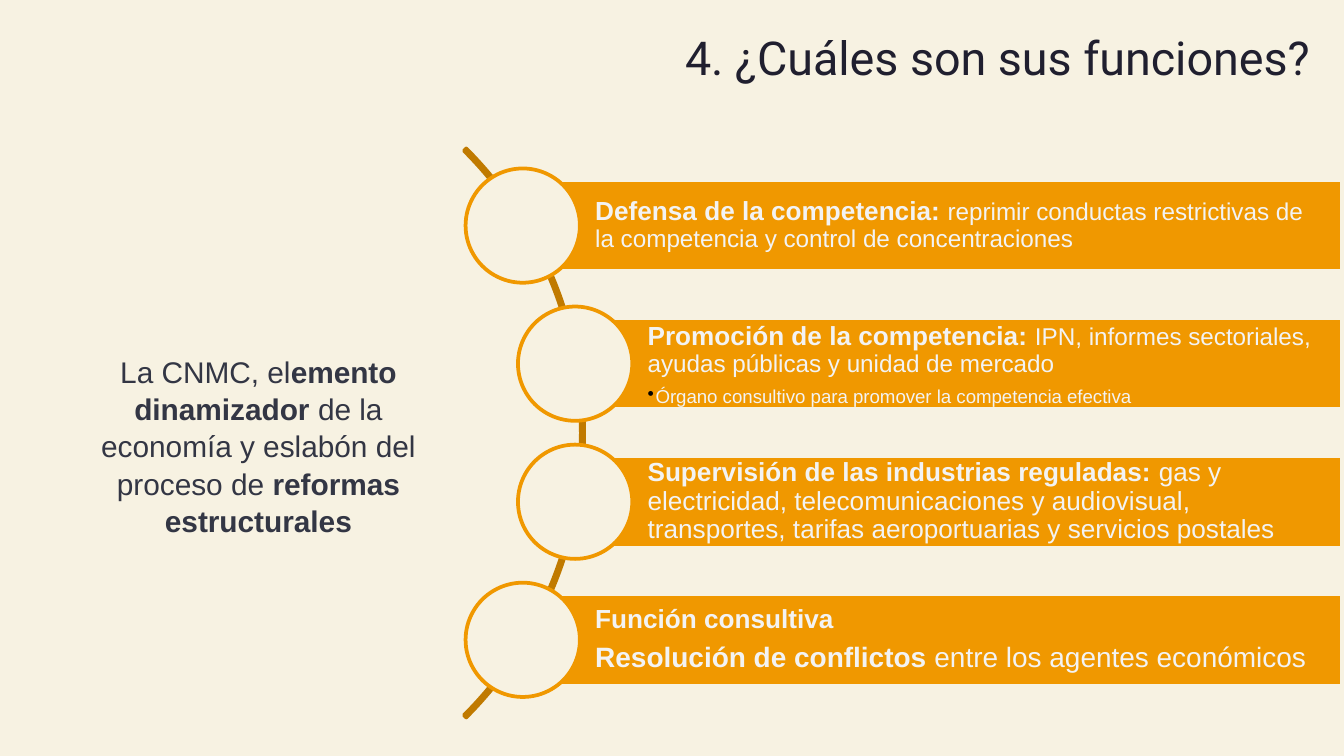
"""Builds the slide on the functions of the CNMC."""
from lxml.etree import SubElement
from pptx import Presentation
from pptx.dml.color import RGBColor
from pptx.enum.shapes import MSO_SHAPE as Shape
from pptx.enum.text import MSO_ANCHOR as Anchor, MSO_AUTO_SIZE as AutoSize, PP_ALIGN as Align
from pptx.oxml.ns import qn
from pptx.util import Cm, Pt

CREAM = RGBColor(0xF7, 0xF2, 0xE2)
ORANGE = RGBColor(0xF0, 0x98, 0x00)
BROWN = RGBColor(0xC0, 0x7A, 0x00)
NAVY = RGBColor(0x20, 0x1F, 0x2F)
SLATE = RGBColor(0x33, 0x36, 0x44)
PALE = RGBColor(0xF3, 0xF3, 0xF3)

RIGHT_EDGE = 25.37
OUTER_LEFT, INNER_LEFT = 9.88, 10.87
FIRST_TOP, STEP = 3.4, 2.61
BAR_HEIGHT, DIAMETER = 1.73, 2.16

FUNCTIONS = [
    (OUTER_LEFT, Anchor.MIDDLE, [
        [("Defensa de la competencia: ", 14, True),
         ("reprimir conductas restrictivas de\nla competencia y control de concentraciones", 13, False)]], None),
    (INNER_LEFT, Anchor.TOP, [
        [("Promoción de la competencia: ", 14, True),
         ("IPN, informes sectoriales, ayudas públicas y unidad de mercado", 13, False)]],
     "Órgano consultivo para promover la competencia efectiva"),
    (INNER_LEFT, Anchor.MIDDLE, [
        [("Supervisión de las industrias reguladas: ", 14, True),
         ("gas y electricidad, telecomunicaciones y audiovisual,\n"
          "transportes, tarifas aeroportuarias y servicios postales", 14, False)]], None),
    (OUTER_LEFT, Anchor.MIDDLE, [
        [("Función consultiva", 14, True)],
        [("Resolución de conflictos ", 15, True), ("entre los agentes económicos", 15, False)]], None),
]

SUMMARY = [
    ("La CNMC, el", 16, False),
    ("emento dinamizador ", 16, True),
    ("de la economía y eslabón del proceso de ", 16, False),
    ("reformas estructurales", 16, True),
]


class SlideBuilder:
    """Holds the style and the current slide."""

    def __init__(self, slide, font="Arial", title_font="Roboto", line_width=2):
        self.slide = slide
        self.font = font
        self.title_font = title_font
        self.line_width = Pt(line_width)
        slide.background.fill.solid()
        slide.background.fill.fore_color.rgb = CREAM

    def title(self, text, left, top, width, height):
        """Fills and places the title placeholder."""
        shape = self.slide.shapes.title
        shape.left, shape.top, shape.width, shape.height = Cm(left), Cm(top), Cm(width), Cm(height)
        frame = shape.text_frame
        frame.text = text
        frame.auto_size = AutoSize.NONE
        frame.vertical_anchor = Anchor.TOP
        frame.margin_left = frame.margin_right = frame.margin_top = frame.margin_bottom = Cm(0.25)
        paragraph = frame.paragraphs[0]
        paragraph.alignment = Align.CENTER
        self.style(paragraph.runs[0], 25, False, NAVY, self.title_font)

    def style(self, run, size, bold, color, font=None):
        """Formats one run."""
        run.font.name = font or self.font
        run.font.size = Pt(size)
        run.font.bold = bold
        run.font.color.rgb = color

    def add_pieces(self, paragraph, pieces, color):
        """Adds styled runs, breaking lines at newlines."""
        for text, size, bold in pieces:
            for index, line in enumerate(text.split("\n")):
                if index:
                    paragraph.add_line_break()
                run = paragraph.add_run()
                run.text = line
                self.style(run, size, bold, color)

    def shape(self, kind, left, top, width, height, fill, line):
        """Adds a preset shape with flat fill and outline."""
        shape = self.slide.shapes.add_shape(kind, Cm(left), Cm(top), Cm(width), Cm(height))
        shape.shadow.inherit = False
        if fill is None:
            shape.fill.background()
        else:
            shape.fill.solid()
            shape.fill.fore_color.rgb = fill
        shape.line.color.rgb = line
        shape.line.width = self.line_width
        return shape

    def arc(self, left, top, diameter):
        """Adds the thin arc that joins the circles."""
        shape = self.shape(Shape.BLOCK_ARC, left, top, diameter, diameter, None, BROWN)
        for index, value in enumerate((189, 27, 0.004)):
            shape.adjustments[index] = value

    def bar(self, left, top, anchor, paragraphs, detail):
        """Adds a bar with its text and an optional bulleted detail."""
        shape = self.shape(Shape.RECTANGLE, left, top, RIGHT_EDGE - left, BAR_HEIGHT, ORANGE, CREAM)
        frame = shape.text_frame
        frame.word_wrap = True
        frame.vertical_anchor = anchor
        frame.margin_left = Cm(1.37)
        frame.margin_right = frame.margin_top = frame.margin_bottom = Cm(0.1)
        for index, pieces in enumerate(paragraphs):
            paragraph = frame.add_paragraph() if index else frame.paragraphs[0]
            self.space(paragraph, 5)
            self.add_pieces(paragraph, pieces, PALE)
        if detail:
            paragraph = frame.add_paragraph()
            paragraph.level = 1
            self.space(paragraph, 1.5)
            self.bullet(paragraph)
            self.add_pieces(paragraph, [(detail, 10, False)], PALE)

    def space(self, paragraph, after):
        """Sets the tight spacing of bar text."""
        paragraph.alignment = Align.LEFT
        paragraph.line_spacing = 0.9
        paragraph.space_after = Pt(after)

    def bullet(self, paragraph):
        """Gives a paragraph a black hanging bullet."""
        properties = paragraph._p.get_or_add_pPr()
        properties.set("marL", str(Cm(0.15)))
        properties.set("indent", str(-Cm(0.15)))
        color = SubElement(properties, qn("a:buClr"))
        SubElement(color, qn("a:srgbClr"), val="000000")
        SubElement(properties, qn("a:buChar"), char="•")

    def circle(self, center_x, center_y):
        """Adds a circle around a centre point."""
        radius = DIAMETER / 2
        self.shape(Shape.OVAL, center_x - radius, center_y - radius, DIAMETER, DIAMETER, CREAM, ORANGE)

    def text(self, pieces, left, top, width, height):
        """Adds a centred text box."""
        box = self.slide.shapes.add_textbox(Cm(left), Cm(top), Cm(width), Cm(height))
        frame = box.text_frame
        frame.word_wrap = True
        frame.auto_size = AutoSize.SHAPE_TO_FIT_TEXT
        paragraph = frame.paragraphs[0]
        paragraph.alignment = Align.CENTER
        paragraph.line_spacing = 1.04
        self.add_pieces(paragraph, pieces, SLATE)


def main():
    """Builds and saves the presentation."""
    presentation = Presentation()
    presentation.slide_width, presentation.slide_height = Cm(25.4), Cm(14.29)
    builder = SlideBuilder(presentation.slides.add_slide(presentation.slide_layouts[5]))
    builder.title("4. ¿Cuáles son sus funciones?", 9.45, 0.3, 18.8, 1.83)
    builder.arc(-4.17, 0.58, 15.21)
    for index, (left, anchor, paragraphs, detail) in enumerate(FUNCTIONS):
        top = FIRST_TOP + index * STEP
        builder.bar(left, top, anchor, paragraphs, detail)
        builder.circle(left, top + BAR_HEIGHT / 2)
    builder.text(SUMMARY, 1.19, 6.53, 7.39, 3.68)
    presentation.save("out.pptx")


if __name__ == "__main__":
    main()
